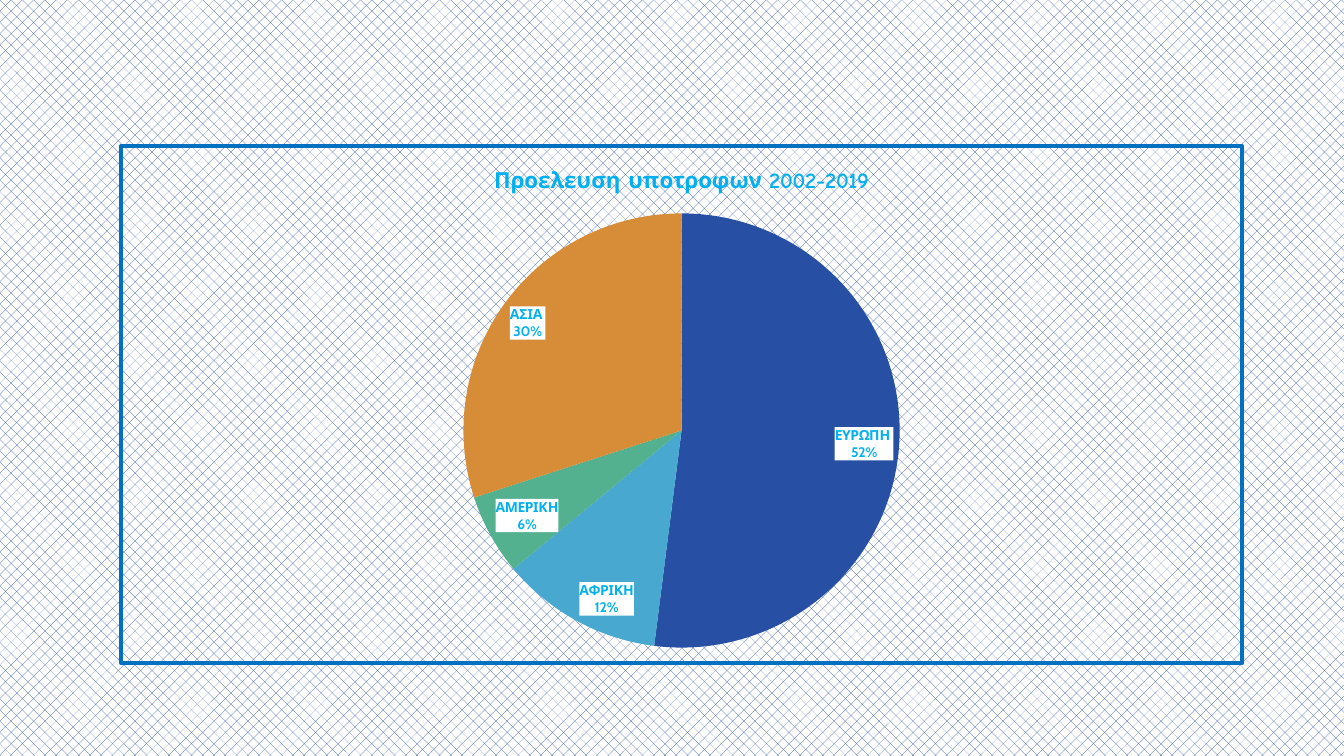
from lxml import etree
from pptx import Presentation
from pptx.chart.data import CategoryChartData
from pptx.dml.color import RGBColor
from pptx.enum.chart import XL_CHART_TYPE, XL_LABEL_POSITION
from pptx.enum.dml import MSO_PATTERN
from pptx.oxml import parse_xml
from pptx.oxml.ns import nsdecls, qn
from pptx.util import Inches, Pt

PIE = XL_CHART_TYPE.PIE
INSIDE_END = XL_LABEL_POSITION.INSIDE_END
PERCENT_25 = MSO_PATTERN.PERCENT_25
TEXT_COLOR = "00B0F0"
BORDER_COLOR = "0070C0"
CONTINENTS = [
    ("ΕΥΡΩΠΗ ", 52, "274FA4"),
    ("ΑΦΡΙΚΗ", 12, "48A8D0"),
    ("ΑΜΕΡΙΚΗ", 6, "53B18F"),
    ("ΑΣΙΑ ", 30, "D78D38"),
    ("ΩΚΕΑΝΙΑ", 0, "BA3F51"),
]


def color(value):
    return RGBColor.from_string(value)


def format_font(font, name, size, bold):
    font.name = name
    font.size = Pt(size)
    font.bold = bold
    font.color.rgb = color(TEXT_COLOR)


presentation = Presentation()
presentation.slide_width = Inches(13.33)
presentation.slide_height = Inches(7.5)
slide = presentation.slides.add_slide(presentation.slide_layouts[6])

background = slide.background.fill
background.patterned()
background.pattern = PERCENT_25
background.fore_color.rgb = color("274FA4")
background.back_color.rgb = color("FFFFFF")

chart_data = CategoryChartData(number_format="0")
chart_data.categories = [name for name, share, fill in CONTINENTS]
chart_data.add_series("Series 1", [share for name, share, fill in CONTINENTS])
chart = slide.shapes.add_chart(
    PIE, Inches(1.18), Inches(1.43), Inches(11.16), Inches(5.17), chart_data
).chart
chart.has_legend = False
format_font(chart.font, "Cabin", 10, True)

chart.has_title = True
chart.chart_title.include_in_layout = False
paragraph = chart.chart_title.text_frame.paragraphs[0]
run = paragraph.add_run()
run.text = "Προελευση υποτροφων 2002-2019"
format_font(run.font, "Comic Neue", 16, True)

plot = chart.plots[0]
plot.vary_by_categories = True
for index, (name, share, fill) in enumerate(CONTINENTS):
    slice_fill = plot.series[0].points[index].format.fill
    slice_fill.solid()
    slice_fill.fore_color.rgb = color(fill)

plot.has_data_labels = True
labels = plot.data_labels
labels.show_percentage = True
labels.show_category_name = True
labels.show_value = False
labels.number_format = "0%"
labels.number_format_is_linked = False
labels.position = INSIDE_END
format_font(labels.font, "Cabin", 10, True)

label_box = parse_xml(
    f'<c:spPr {nsdecls("c", "a")}><a:solidFill><a:srgbClr val="FFFFFF"/></a:solidFill></c:spPr>'
)
labels_element = plot._element.find(qn("c:dLbls"))
labels_element.find(qn("c:txPr")).addprevious(label_box)
separator = etree.Element(qn("c:separator"))
separator.text = "\n"
labels_element.find(qn("c:showBubbleSize")).addnext(separator)

chart_frame = parse_xml(
    f'<c:spPr {nsdecls("c", "a")}><a:noFill/><a:ln w="{Pt(3)}"><a:solidFill>'
    f'<a:srgbClr val="{BORDER_COLOR}"/></a:solidFill></a:ln></c:spPr>'
)
chart._chartSpace.find(qn("c:txPr")).addprevious(chart_frame)

plot_area = chart._chartSpace.chart.plotArea
for layout in plot_area.findall(qn("c:layout")):
    plot_area.remove(layout)
plot_area.insert(0, parse_xml(
    f'<c:layout {nsdecls("c")}><c:manualLayout><c:layoutTarget val="inner"/>'
    '<c:xMode val="edge"/><c:yMode val="edge"/><c:x val="0.3"/><c:y val="0.13"/>'
    '<c:w val="0.4"/><c:h val="0.84"/></c:manualLayout></c:layout>'
))

presentation.save("out.pptx")
